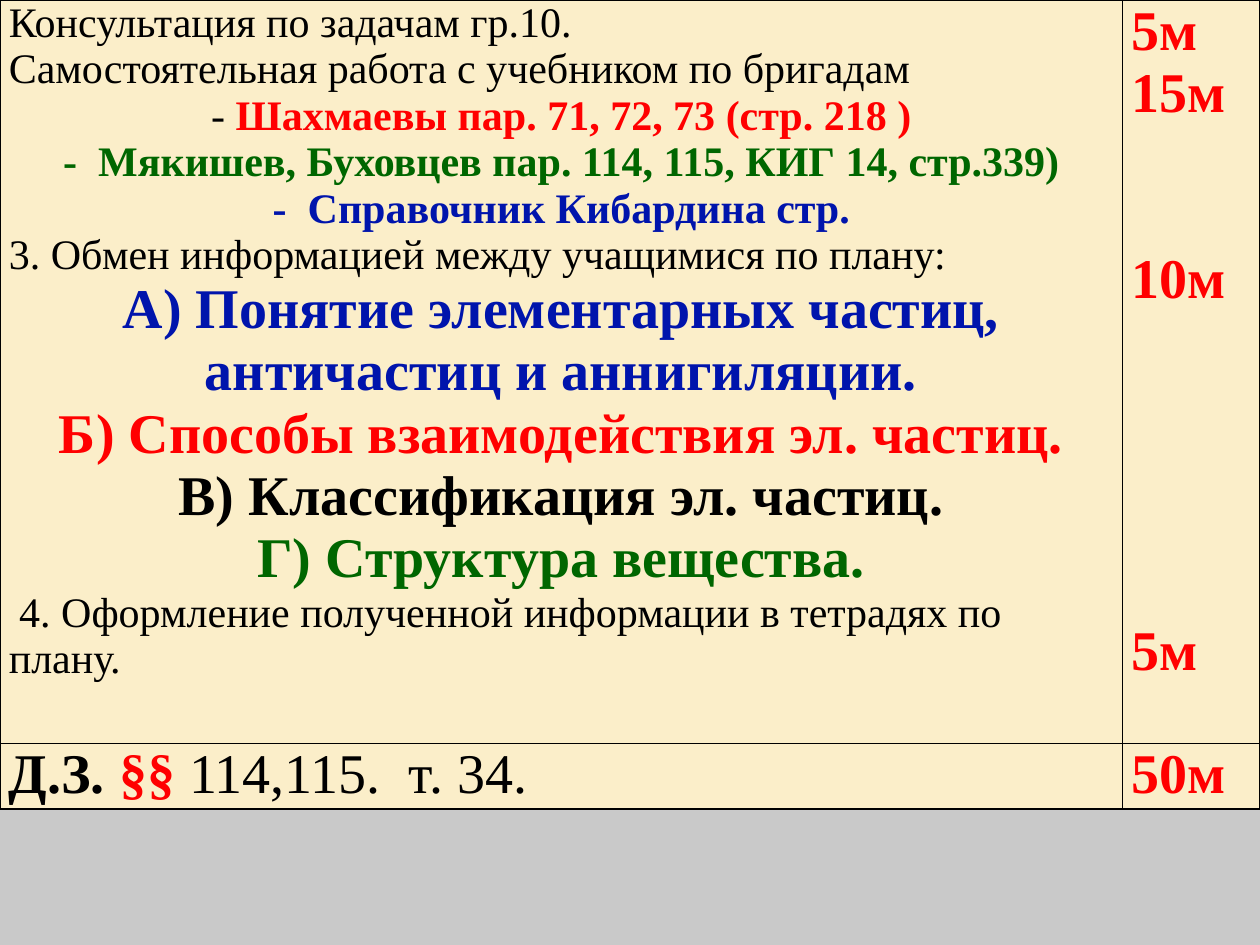
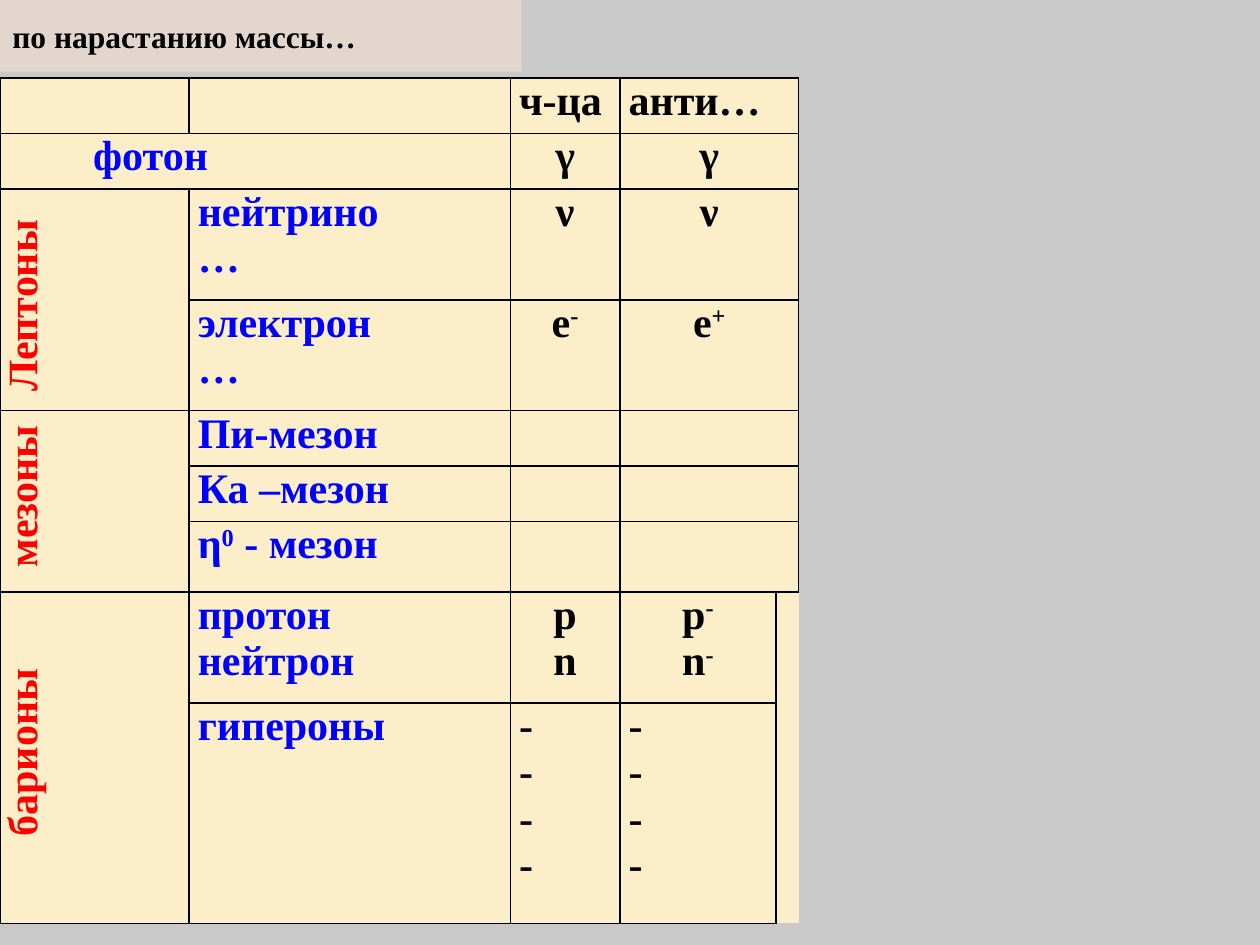
from lxml import etree
from pptx import Presentation
from pptx.dml.color import RGBColor
from pptx.enum import shapes, text
from pptx.oxml import ns
from pptx.util import Inches, Pt

FONT = "Times New Roman"
HEX = {"back": "C9C9C9", "cell": "FBEEC9", "band": "E2D6CF", "black": "000000",
       "red": "FF0000", "green": "006600", "navy": "0014AC", "blue": "0000FF"}
LEFT, MID = text.PP_ALIGN.LEFT, text.PP_ALIGN.CENTER
SIDES = ("L", "R", "T", "B")

# Lesson plan: paragraphs are (align, size, runs); runs are (text, colour, bold)
STEPS = [
    (LEFT, 24, [("Консультация по задачам гр.10.", "black", False)]),
    (LEFT, 24, [("Самостоятельная работа с учебником по бригадам", "black", False)]),
    (MID, 24, [("- ", "black", False),
               ("Шахмаевы пар. 71, 72, 73 (стр. 218 )", "red", True)]),
    (MID, 24, [("-  Мякишев, Буховцев пар. 114, 115, КИГ 14, стр.339)", "green", True)]),
    (MID, 24, [("-  Справочник Кибардина стр.", "navy", True)]),
    (LEFT, 24, [("3. Обмен информацией между учащимися по плану:", "black", False)]),
    (MID, 32, [("А) Понятие элементарных частиц, античастиц и аннигиляции.", "navy", True)]),
    (MID, 32, [("Б) Способы взаимодействия эл. частиц.", "red", True)]),
    (MID, 32, [("В) Классификация эл. частиц.", "black", True)]),
    (MID, 32, [("Г) Структура вещества.", "green", True)]),
    (LEFT, 24, [(" 4. Оформление полученной информации в тетрадях по плану.", "black", False)]),
]
HOME = [(LEFT, 32, [("Д.З. ", "black", True), ("§§", "red", True),
                    (" 114,115.  т. 34.", "black", False)])]
# Time marks with the number of lines to skip above each
TIMES = [("5м", 0), ("15м", 0), ("10м", 2), ("5м", 5)]
TOTAL = "50м"
LINE = 35.4

# Particle table: "^" opens and closes a superscript
TITLE = "по нарастанию массы…"
WIDTHS = [1.5, 2.55, 0.87, 1.24, 0.1]
ROWS = [
    (0.44, "", "", "ч-ца", "анти…"),
    (0.44, "фотон", "", "γ", "γ"),
    (0.88, "Лептоны", "нейтрино\n…", "ν", "ν"),
    (0.88, "", "электрон\n…", "e^-", "e^+"),
    (0.44, "мезоны", "Пи-мезон", "", ""),
    (0.44, "", "Ка –мезон", "", ""),
    (0.56, "", "η^0^ - мезон", "", ""),
    (0.88, "барионы", "протон\nнейтрон", "p\nn", "p^-\nn^-"),
    (1.75, "", "гипероны", "-\n-\n-\n-", "-\n-\n-\n-"),
]
GROUPS = {2: 2, 4: 3, 7: 2}  # first row: rows spanned
SPLIT = 7  # from this row on, the last column stands alone


def rgb(name):
    return RGBColor.from_string(HEX[name])


def style(run, size, color, bold=True):
    font = run.font
    font.name, font.size, font.bold = FONT, Pt(size), bold
    font.color.rgb = rgb(color)


def add_run(para, words, size, color, bold=True, sup=False):
    run = para.add_run()
    run.text = words
    style(run, size, color, bold)
    if sup:
        run._r.get_or_add_rPr().set("baseline", "30000")


def paras(frame, count):
    return [frame.paragraphs[0]] + [frame.add_paragraph() for _ in range(count - 1)]


def write(cell, items):
    for para, (align, size, runs) in zip(paras(cell.text_frame, len(items)), items):
        para.alignment = align
        for words, color, bold in runs:
            add_run(para, words, size, color, bold)


def write_marked(cell, words, color, align):
    lines = words.split("\n")
    for para, line in zip(paras(cell.text_frame, len(lines)), lines):
        para.alignment = align
        for num, part in enumerate(line.split("^")):
            if part:
                add_run(para, part, 24, color, sup=num % 2 == 1)


def indent(para, inches):
    props = para._p.get_or_add_pPr()
    props.set("marL", str(Inches(inches)))
    props.set("indent", "0")


def edge(cell, drawn):
    props = cell._tc.get_or_add_tcPr()
    for num, side in enumerate(SIDES):
        line = etree.Element(ns.qn("a:ln" + side), w=str(Pt(1)))
        if side in drawn:
            fill = etree.SubElement(line, ns.qn("a:solidFill"))
            etree.SubElement(fill, ns.qn("a:srgbClr"), val=HEX["black"])
        else:
            etree.SubElement(line, ns.qn("a:noFill"))
        props.insert(num, line)


def new_slide(deck):
    slide = deck.slides.add_slide(deck.slide_layouts[6])
    slide.background.fill.solid()
    slide.background.fill.fore_color.rgb = rgb("back")
    return slide


def new_table(slide, top, widths, heights, edges=None):
    """Add a cream table; edges overrides the drawn sides of some cells."""
    edges = edges or {}
    grid = slide.shapes.add_table(len(heights), len(widths), 0, Inches(top),
                                  Inches(sum(widths)), Inches(sum(heights))).table
    grid.first_row = grid.horz_banding = False
    for col, width in zip(grid.columns, widths):
        col.width = Inches(width)
    for r, height in enumerate(heights):
        grid.rows[r].height = Inches(height)
        for c in range(len(widths)):
            cell = grid.cell(r, c)
            cell.margin_left = cell.margin_right = Inches(0.07)
            cell.margin_top = cell.margin_bottom = 0
            cell.fill.solid()
            cell.fill.fore_color.rgb = rgb("cell")
            edge(cell, edges.get((r, c), SIDES))
    return grid


def plan_slide(deck):
    grid = new_table(new_slide(deck), 0, [8.91, 1.09], [5.9, 0.52])
    write(grid.cell(0, 0), STEPS)
    write(grid.cell(1, 0), HOME)
    times = grid.cell(0, 1)
    write(times, [(LEFT, 32, [(mark, "red", True)]) for mark, _ in TIMES])
    for para, (_, skip) in zip(times.text_frame.paragraphs, TIMES):
        para.space_before = Pt(skip * LINE)
    write(grid.cell(1, 1), [(LEFT, 32, [(TOTAL, "red", True)])])


def mass_slide(deck):
    slide = new_slide(deck)
    last = len(WIDTHS) - 1
    edges = {(SPLIT, last): ("L", "T"), (SPLIT + 1, last): ("L",)}
    grid = new_table(slide, 0.62, WIDTHS, [row[0] for row in ROWS], edges)

    # Merged cells
    for r in range(SPLIT):
        grid.cell(r, last - 1).merge(grid.cell(r, last))
    grid.cell(1, 0).merge(grid.cell(1, 1))
    for r, span in GROUPS.items():
        grid.cell(r, 0).merge(grid.cell(r + span - 1, 0))

    # Cell text
    for r, (_, *words) in enumerate(ROWS):
        for c, word in enumerate(words):
            if not word:
                continue
            cell = grid.cell(r, c)
            group = c == 0 and r in GROUPS
            color = "red" if group else "blue" if c < 2 else "black"
            signs = c > 1 and 0 < r < len(ROWS) - 1
            centred = signs or (group and r != min(GROUPS))
            write_marked(cell, word, color, MID if centred else LEFT)
            if group:
                cell._tc.get_or_add_tcPr().set("vert", "vert270")
            if c == 0:
                indent(cell.text_frame.paragraphs[0], 0.08 if group else 0.67)

    # Title band
    band = slide.shapes.add_shape(shapes.MSO_SHAPE.RECTANGLE, 0, 0,
                                  Inches(4.14), Inches(0.57))
    band.shadow.inherit = False
    band.fill.solid()
    band.fill.fore_color.rgb = rgb("band")
    band.line.fill.background()
    frame = band.text_frame
    frame.text = TITLE
    frame.word_wrap = True
    frame.vertical_anchor = text.MSO_ANCHOR.MIDDLE
    frame.paragraphs[0].alignment = LEFT
    style(frame.paragraphs[0].runs[0], 18, "black")


def main():
    deck = Presentation()
    deck.slide_width, deck.slide_height = Inches(10), Inches(7.5)
    plan_slide(deck)
    mass_slide(deck)
    deck.save("out.pptx")


if __name__ == "__main__":
    main()
